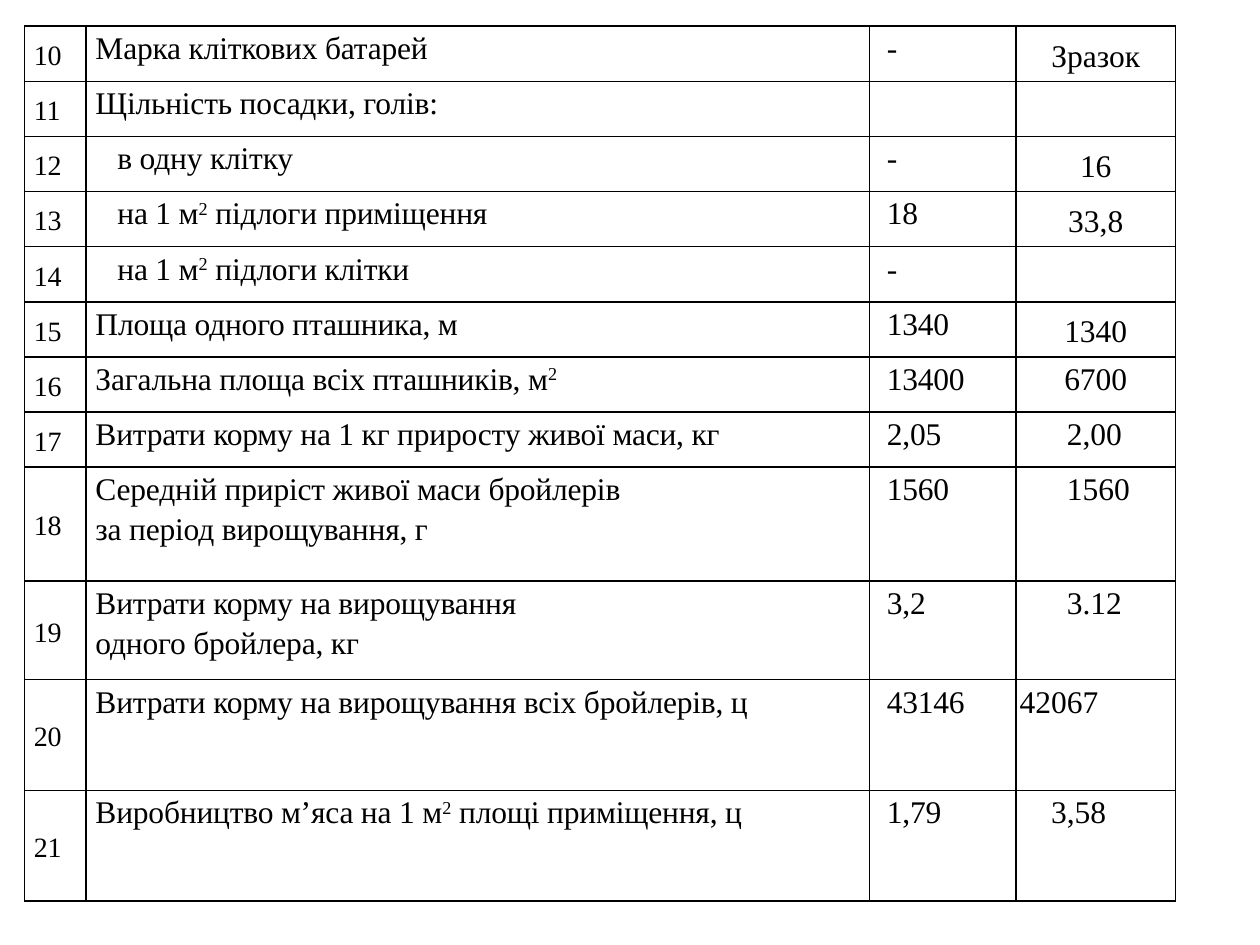
from dataclasses import dataclass

from lxml.etree import SubElement
from pptx import Presentation
from pptx.dml.color import RGBColor
from pptx.enum.text import MSO_ANCHOR, PP_ALIGN
from pptx.oxml.ns import qn
from pptx.util import Pt

FONT = "Times New Roman"
BLACK = "000000"
COLUMN_WIDTHS = [35.2, 447.7, 83.8, 91]
ROW_HEIGHTS = [31.5] * 8 + [65, 56.5, 63.2, 63.2]
SUB_ITEM = 12.5


@dataclass(frozen=True)
class CellStyle:
    size: float = 18
    inset: float = 5.4
    spacing: float = 0
    indent: float = 0
    align: PP_ALIGN = PP_ALIGN.LEFT
    anchor: MSO_ANCHOR = MSO_ANCHOR.TOP


@dataclass(frozen=True)
class Indicator:
    label: str
    floor: str
    cage: str
    cage_style: CellStyle
    indent: float = 0


NUMBER = CellStyle(size=16, spacing=-0.1, align=PP_ALIGN.JUSTIFY, anchor=MSO_ANCHOR.MIDDLE)
FLOOR = CellStyle(spacing=-0.1, indent=4.5)
MIDDLE = CellStyle(inset=2, align=PP_ALIGN.CENTER, anchor=MSO_ANCHOR.MIDDLE)
CENTERED = CellStyle(inset=2, align=PP_ALIGN.CENTER)
INDENTED = CellStyle(inset=2, indent=27)
LEFT = CellStyle(inset=2)
HALF_INDENTED = CellStyle(inset=2, indent=18)

INDICATORS = [
    Indicator("Марка кліткових батарей", "-", "Зразок", MIDDLE),
    Indicator("Щільність посадки, голів:", "", "", MIDDLE),
    Indicator("в одну клітку", "-", "16", MIDDLE, SUB_ITEM),
    Indicator("на 1 м^2^ підлоги приміщення", "18", "33,8", MIDDLE, SUB_ITEM),
    Indicator("на 1 м^2^ підлоги клітки", "-", "", MIDDLE, SUB_ITEM),
    Indicator("Площа одного пташника, м", "1340", "1340", MIDDLE),
    Indicator("Загальна площа всіх пташників, м^2^", "13400", "6700", CENTERED),
    Indicator("Витрати корму на 1 кг приросту живої маси, кг", "2,05", "2,00", INDENTED),
    Indicator("Середній приріст живої маси бройлерів\nза період вирощування, г",
              "1560", "1560", INDENTED),
    Indicator("Витрати корму на вирощування\nодного бройлера, кг", "3,2", "3.12", INDENTED),
    Indicator("Витрати корму на вирощування всіх бройлерів, ц", "43146", "42067", LEFT),
    Indicator("Виробництво м’яса на 1 м^2^ площі приміщення, ц", "1,79", "3,58", HALF_INDENTED),
]


def color(value: str) -> RGBColor:
    return RGBColor.from_string(value)


def add_borders(cell) -> None:
    tcPr = cell._tc.get_or_add_tcPr()
    for side in ("a:lnL", "a:lnR", "a:lnT", "a:lnB"):
        ln = SubElement(tcPr, qn(side), w=str(Pt(1)))
        fill = SubElement(ln, qn("a:solidFill"))
        SubElement(fill, qn("a:srgbClr"), val=BLACK)


def add_run(p, text: str, style: CellStyle, superscript: bool) -> None:
    r = p.add_run()
    r.text = text
    r.font.name = FONT
    r.font.size = Pt(style.size)
    r.font.bold = False
    r.font.color.rgb = color(BLACK)
    rPr = r._r.get_or_add_rPr()
    rPr.set("spc", str(round(style.spacing * 100)))
    if superscript:
        rPr.set("baseline", "30000")


def write_cell(cell, text: str, style: CellStyle) -> None:
    add_borders(cell)
    cell.fill.background()
    cell.margin_left = cell.margin_right = Pt(style.inset)
    cell.margin_top = cell.margin_bottom = Pt(0)
    cell.vertical_anchor = style.anchor
    tf = cell.text_frame
    for i, line in enumerate(text.split("\n")):
        p = tf.add_paragraph() if i else tf.paragraphs[0]
        p.alignment = style.align
        p.line_spacing = 1.15
        pPr = p._p.get_or_add_pPr()
        pPr.set("marL", str(Pt(style.indent)))
        pPr.set("indent", "0")
        for j, part in enumerate(line.split("^")):
            if part:
                add_run(p, part, style, j % 2 == 1)


def add_indicator_table(s) -> None:
    frame = s.shapes.add_table(len(INDICATORS), len(COLUMN_WIDTHS), Pt(14), Pt(15),
                               Pt(sum(COLUMN_WIDTHS)), Pt(sum(ROW_HEIGHTS)))
    table = frame.table
    table.first_row = table.horz_banding = False
    for column, width in zip(table.columns, COLUMN_WIDTHS):
        column.width = Pt(width)
    for row, height in zip(table.rows, ROW_HEIGHTS):
        row.height = Pt(height)
    for i, item in enumerate(INDICATORS):
        label_style = CellStyle(spacing=-0.1, indent=item.indent)
        contents = [(str(10 + i), NUMBER), (item.label, label_style),
                    (item.floor, FLOOR), (item.cage, item.cage_style)]
        for j, (text, style) in enumerate(contents):
            write_cell(table.cell(i, j), text, style)


def main() -> None:
    prs = Presentation()
    prs.slide_width, prs.slide_height = Pt(720), Pt(540)
    s = prs.slides.add_slide(prs.slide_layouts[6])
    add_indicator_table(s)
    prs.save("out.pptx")


if __name__ == "__main__":
    main()
